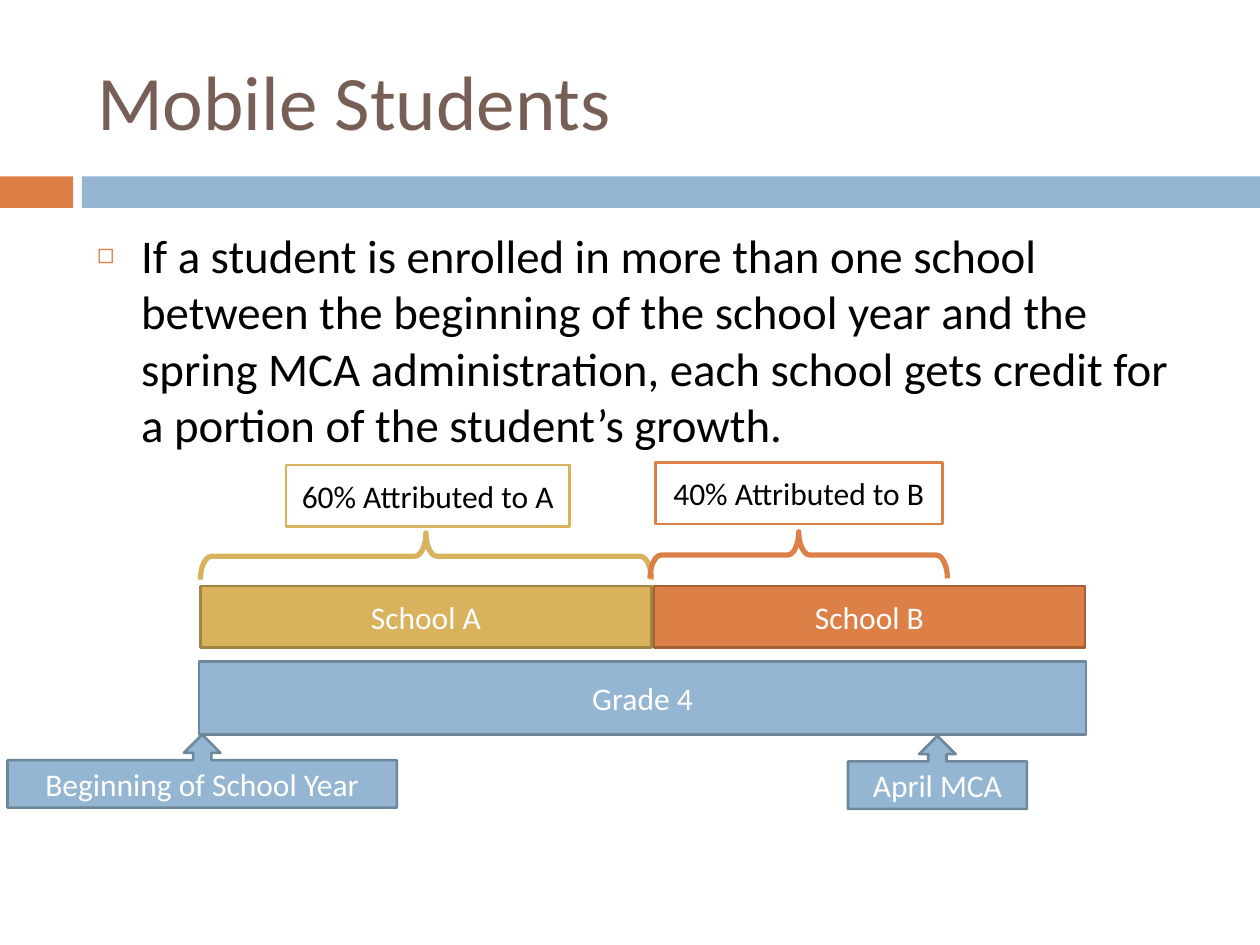
import pptx
import pptx.util
import pptx.dml.color
import pptx.enum.shapes
import pptx.enum.text
import pptx.oxml
import pptx.oxml.ns

SHAPE = pptx.enum.shapes.MSO_SHAPE
ALIGN = pptx.enum.text.PP_ALIGN
ANCHOR = pptx.enum.text.MSO_ANCHOR
UNIT = pptx.util.Inches(0.1)
FONT = "Calibri"
BLUE, BLUE_EDGE = "94B6D2", "6D879B"
GOLD, GOLD_EDGE = "D8B25C", "A08444"
ORANGE, ORANGE_EDGE = "DD8047", "A35F35"
WHITE, BLACK, BROWN = "FFFFFF", "000000", "775F55"


def color(value):
    return pptx.dml.color.RGBColor.from_string(value)


def grid(*cells):
    return [round(cell * UNIT) for cell in cells]


def write(frame, text, size, shade, align, anchor):
    frame.word_wrap = True
    frame.auto_size = pptx.enum.text.MSO_AUTO_SIZE.NONE
    frame.vertical_anchor = anchor
    para = frame.paragraphs[0]
    para.alignment = align
    para.space_before = pptx.util.Pt(0)
    span = para.add_run()
    span.text = text
    span.font.name = FONT
    span.font.size = pptx.util.Pt(size)
    span.font.color.rgb = color(shade)


def fill_placeholder(holder, cells, text, size, shade, anchor):
    holder.left, holder.top, holder.width, holder.height = grid(*cells)
    write(holder.text_frame, text, size, shade, ALIGN.LEFT, anchor)


def add_bullet(para, mark, shade, percent, indent):
    props = para._p.get_or_add_pPr()
    props.set("marL", str(indent))
    props.set("indent", str(-indent))
    for markup in (
        f'<a:buClr {{}}><a:srgbClr val="{shade}"/></a:buClr>',
        f'<a:buSzPct {{}} val="{percent * 1000}"/>',
        f'<a:buFont {{}} typeface="{FONT}"/>',
        f'<a:buChar {{}} char="{mark}"/>',
    ):
        props.append(pptx.oxml.parse_xml(markup.format(pptx.oxml.ns.nsdecls("a"))))


def add_box(page, kind, cells, fill, edge=None, text=None, shade=WHITE):
    box = page.shapes.add_shape(kind, *grid(*cells))
    box.shadow.inherit = False
    box.fill.solid()
    box.fill.fore_color.rgb = color(fill)
    if edge:
        box.line.color.rgb = color(edge)
        box.line.width = pptx.util.Pt(1.5)
    else:
        box.line.fill.background()
    if text:
        write(box.text_frame, text, 18, shade, ALIGN.CENTER, ANCHOR.MIDDLE)


def add_brace(page, cells, edge):
    left, top, span, depth = cells
    offset = (span - depth) / 2
    brace = page.shapes.add_shape(
        SHAPE.RIGHT_BRACE, *grid(left + offset, top - offset, depth, span))
    brace.shadow.inherit = False
    brace.rotation = 90
    brace._element.spPr.xfrm.set("flipH", "1")
    brace.adjustments[0] = 0.24
    brace.adjustments[1] = 0.5
    brace.fill.background()
    brace.line.color.rgb = color(edge)
    brace.line.width = pptx.util.Pt(3)


def main():
    deck = pptx.Presentation()
    deck.slide_width, deck.slide_height = grid(100, 75)
    page = deck.slides.add_slide(deck.slide_layouts[1])
    title, body = page.placeholders

    add_box(page, SHAPE.RECTANGLE, (0, 14, 5.8, 2.5), ORANGE)
    add_box(page, SHAPE.RECTANGLE, (6.5, 14, 93.5, 2.5), BLUE)
    fill_placeholder(title, (6.7, 2.5, 89.2, 10.8), "Mobile Students",
                     44, BROWN, ANCHOR.MIDDLE)
    add_bullet(body.text_frame.paragraphs[0], "◻", ORANGE, 60,
               pptx.util.Inches(0.35))
    fill_placeholder(
        body, (6.7, 17.5, 89.2, 17.7),
        "If a student is enrolled in more than one school between the "
        "beginning of the school year and the spring MCA administration, "
        "each school gets credit for a portion of the student’s growth.",
        26.8, BLACK, ANCHOR.TOP)

    add_box(page, SHAPE.RECTANGLE, (15.8, 52.5, 70.4, 5.8),
            BLUE, BLUE_EDGE, "Grade 4")
    for left, width, fill, edge, text in (
        (15.9, 35.8, GOLD, GOLD_EDGE, "School A"),
        (51.9, 34.2, ORANGE, ORANGE_EDGE, "School B"),
    ):
        add_box(page, SHAPE.RECTANGLE, (left, 46.5, width, 4.9), fill, edge, text)
    for cells, edge in (
        ((15.9, 42.3, 35.8, 3.7), GOLD),
        ((51.6, 42.2, 23.6, 3.7), ORANGE),
    ):
        add_brace(page, cells, edge)
    for cells, edge, text in (
        ((52, 36.7, 22.8, 4.9), ORANGE, "40% Attributed to B"),
        ((22.7, 36.9, 22.5, 4.9), GOLD, "60% Attributed to A"),
    ):
        add_box(page, SHAPE.RECTANGLE, cells, WHITE, edge, text, BLACK)
    for cells, text in (
        ((0.6, 58.3, 30.9, 5.8), "Beginning of School Year"),
        ((67.3, 58.4, 14.2, 5.8), "April MCA"),
    ):
        add_box(page, SHAPE.UP_ARROW_CALLOUT, cells, BLUE, BLUE_EDGE, text)

    deck.save("out.pptx")


if __name__ == "__main__":
    main()
